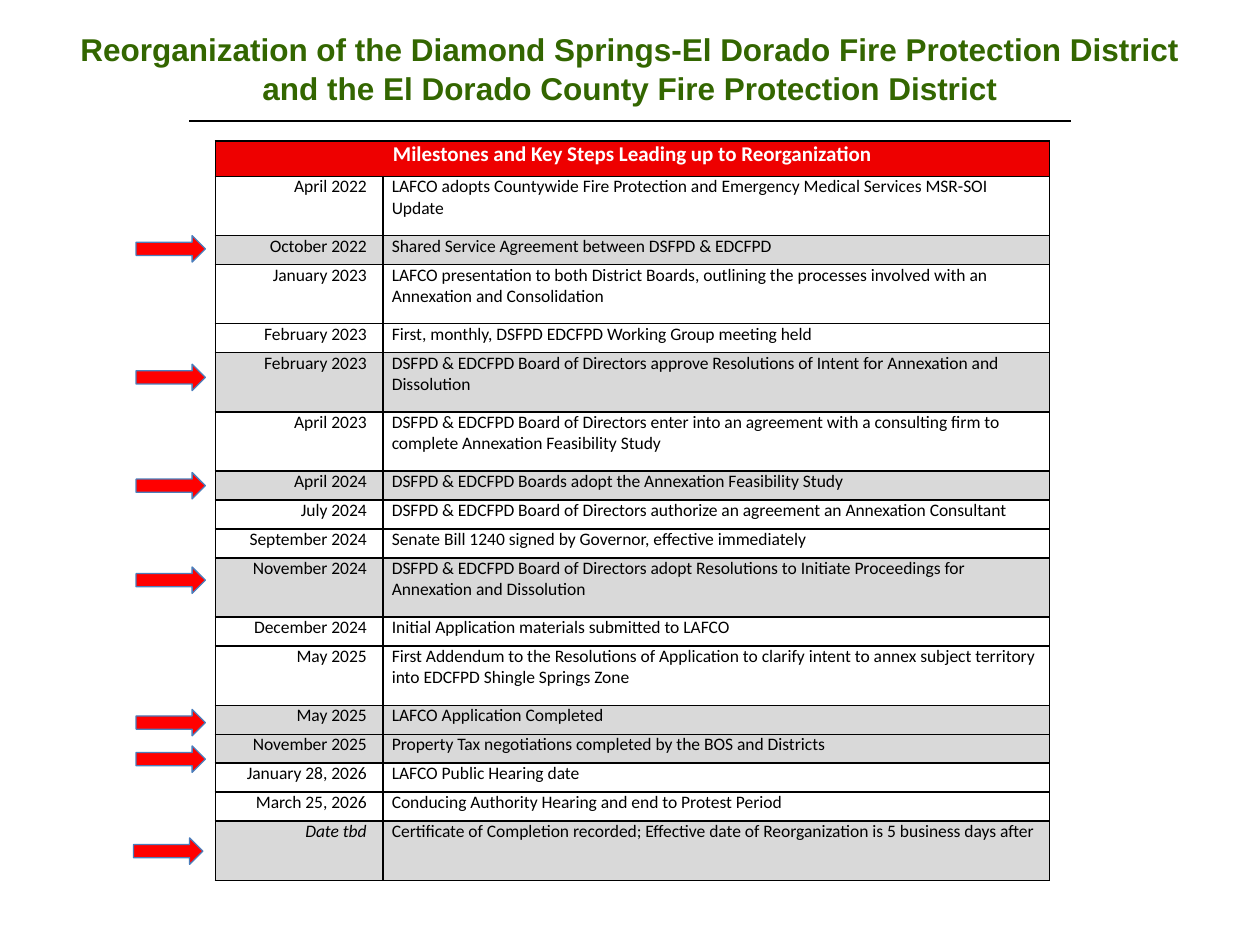
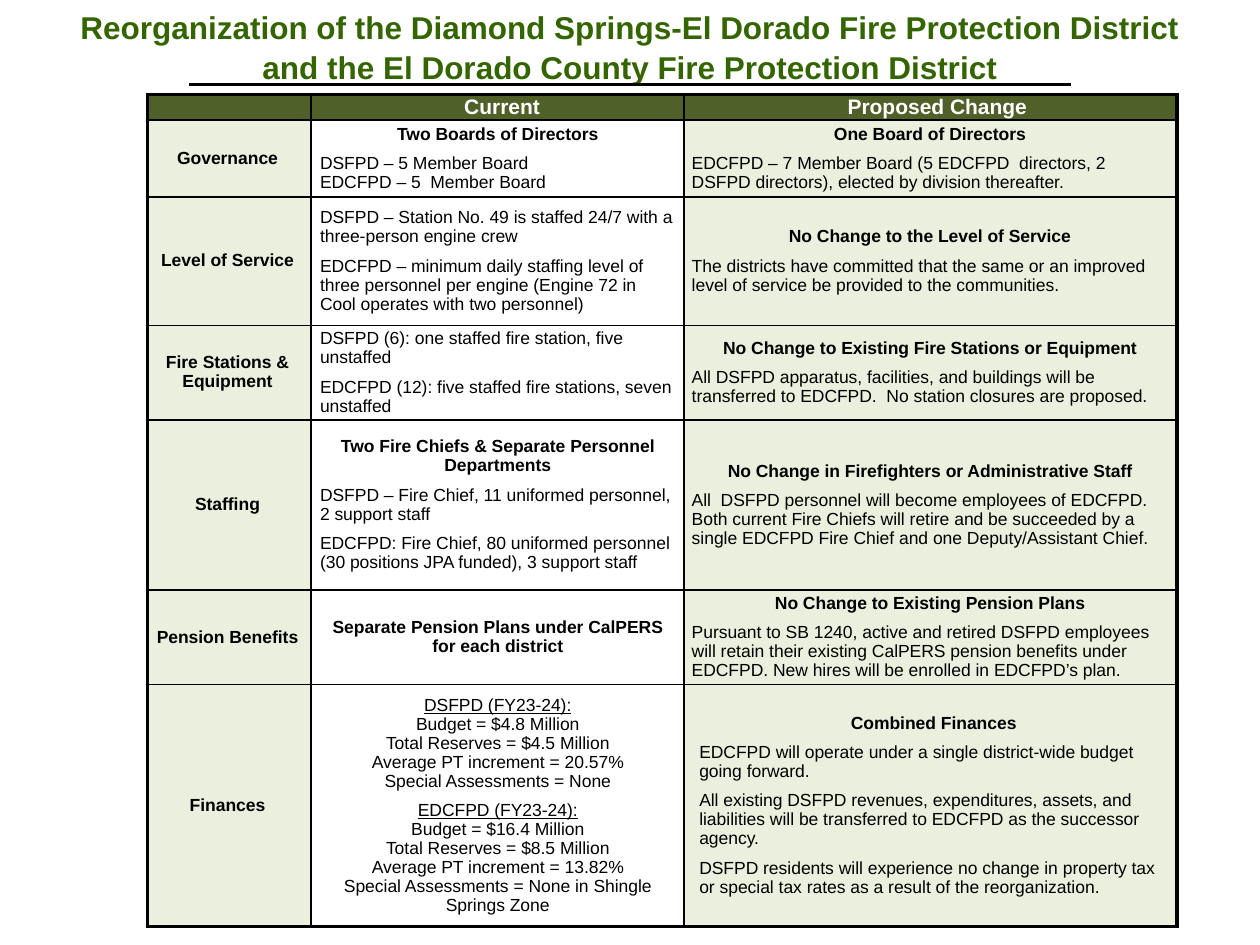
from pptx import Presentation
from pptx.dml.color import RGBColor
from pptx.enum.shapes import MSO_CONNECTOR, MSO_SHAPE
from pptx.enum.text import MSO_ANCHOR, MSO_AUTO_SIZE, PP_ALIGN
from pptx.oxml import parse_xml
from pptx.oxml.ns import nsdecls, qn
from pptx.util import Inches, Pt
from lxml import etree

LEFT, CENTER, RIGHT = PP_ALIGN.LEFT, PP_ALIGN.CENTER, PP_ALIGN.RIGHT
TOP, MIDDLE = MSO_ANCHOR.TOP, MSO_ANCHOR.MIDDLE
NO_AUTOSIZE = MSO_AUTO_SIZE.NONE
ARROW, STRAIGHT = MSO_SHAPE.RIGHT_ARROW, MSO_CONNECTOR.STRAIGHT

COLORS = {
    "title": "336600", "black": "000000", "white": "FFFFFF",
    "banner": "EE0000", "key": "D9D9D9", "arrow": "FF0000", "arrow_line": "4B7EBC",
    "header": "4F6128", "tint": "EAF0DD",
}
TITLE_LINES = [
    "Reorganization of the Diamond Springs-El Dorado Fire Protection District",
    "and the El Dorado County Fire Protection District",
]

MILESTONES = [
    ("April 2022", "LAFCO adopts Countywide Fire Protection and Emergency Medical Services MSR-SOI Update", 2, False),
    ("October 2022", "Shared Service Agreement between DSFPD & EDCFPD", 1, True),
    ("January 2023", "LAFCO presentation to both District Boards, outlining the processes involved with an "
     "Annexation and Consolidation", 2, False),
    ("February 2023", "First, monthly, DSFPD EDCFPD Working Group meeting held", 1, False),
    ("February 2023", "DSFPD & EDCFPD Board of Directors approve Resolutions of Intent for Annexation and "
     "Dissolution", 2, True),
    ("April 2023", "DSFPD & EDCFPD Board of Directors enter into an agreement with a consulting firm to "
     "complete Annexation Feasibility Study", 2, False),
    ("April 2024", "DSFPD & EDCFPD Boards adopt the Annexation Feasibility Study", 1, True),
    ("July 2024", "DSFPD & EDCFPD Board of Directors authorize an agreement an Annexation Consultant", 1, False),
    ("September 2024", "Senate Bill 1240 signed by Governor, effective immediately", 1, False),
    ("November 2024", "DSFPD & EDCFPD Board of Directors adopt Resolutions to Initiate Proceedings for "
     "Annexation and Dissolution", 2, True),
    ("December 2024", "Initial Application materials submitted to LAFCO", 1, False),
    ("May 2025", "First Addendum to the Resolutions of Application to clarify intent to annex subject territory "
     "into EDCFPD Shingle Springs Zone", 2, False),
    ("May 2025", "LAFCO Application Completed", 1, True),
    ("November 2025", "Property Tax negotiations completed by the BOS and Districts", 1, True),
    ("January 28, 2026", "LAFCO Public Hearing date", 1, False),
    ("March 25, 2026", "Conducing Authority Hearing and end to Protest Period", 1, False),
    ("Date tbd", "Certificate of Completion recorded; Effective date of Reorganization is 5 business days after",
     2, True),
]
ROW_HEIGHTS = {1: 0.23, 2: 0.47}
ARROWS = [(1.08, 1.87), (1.08, 2.89), (1.08, 3.75), (1.08, 4.5), (1.08, 5.63), (1.08, 5.92), (1.06, 6.65)]

HEAD = {"bold": True, "align": CENTER, "after": 6}
BODY = {"after": 6}
TIGHT = {}
MID = {"align": CENTER}
MID_END = {"align": CENTER, "after": 6}
UNDER = {"align": CENTER, "underline": True}

COMPARISON = [
    ("Governance", 0.61,
     [("Two Boards of Directors", HEAD), ("DSFPD – 5 Member Board", TIGHT), ("EDCFPD – 5  Member Board", TIGHT)],
     [("One Board of Directors", HEAD),
      ("EDCFPD – 7 Member Board (5 EDCFPD  directors, 2 DSFPD directors), elected by division thereafter.", TIGHT)]),
    ("Level of Service", 1.02,
     [("DSFPD – Station No. 49 is staffed 24/7 with a three-person engine crew", BODY),
      ("EDCFPD – minimum daily staffing level of three personnel per engine (Engine 72 in Cool operates "
       "with two personnel)", TIGHT)],
     [("No Change to the Level of Service", HEAD),
      ("The districts have committed that the same or an improved level of service be provided to the "
       "communities.", TIGHT)]),
    ("Fire Stations & Equipment", 0.75,
     [("DSFPD (6): one staffed fire station, five unstaffed", BODY),
      ("EDCFPD (12): five staffed fire stations, seven unstaffed", TIGHT)],
     [("No Change to Existing Fire Stations or Equipment", HEAD),
      ("All DSFPD apparatus, facilities, and buildings will be transferred to EDCFPD.  No station closures "
       "are proposed.", TIGHT)]),
    ("Staffing", 1.35,
     [("Two Fire Chiefs & Separate Personnel Departments", HEAD),
      ("DSFPD – Fire Chief, 11 uniformed personnel, 2 support staff", BODY),
      ("EDCFPD: Fire Chief, 80 uniformed personnel (30 positions JPA funded), 3 support staff", TIGHT)],
     [("No Change in Firefighters or Administrative Staff", HEAD),
      ("All  DSFPD personnel will become employees of EDCFPD. Both current Fire Chiefs will retire and be "
       "succeeded by a single EDCFPD Fire Chief and one Deputy/Assistant Chief.", TIGHT)]),
    ("Pension Benefits", 0.75,
     [("Separate Pension Plans under CalPERS for each district", HEAD)],
     [("No Change to Existing Pension Plans", HEAD),
      ("Pursuant to SB 1240, active and retired DSFPD employees will retain their existing CalPERS pension "
       "benefits under EDCFPD. New hires will be enrolled in EDCFPD’s plan.", TIGHT)]),
    ("Finances", 1.92,
     [("DSFPD (FY23-24):", UNDER), ("Budget = $4.8 Million", MID), ("Total Reserves = $4.5 Million", MID),
      ("Average PT increment = 20.57%", MID), ("Special Assessments = None", MID_END),
      ("EDCFPD (FY23-24):", UNDER), ("Budget = $16.4 Million", MID), ("Total Reserves = $8.5 Million", MID),
      ("Average PT increment = 13.82%", MID), ("Special Assessments = None in Shingle Springs Zone", MID)],
     [("Combined Finances", HEAD),
      ("EDCFPD will operate under a single district-wide budget going forward.", BODY),
      ("All existing DSFPD revenues, expenditures, assets, and liabilities will be transferred to EDCFPD as "
       "the successor agency.", BODY),
      ("DSFPD residents will experience no change in property tax or special tax rates as a result of the "
       "reorganization.", TIGHT)]),
]


def rgb(name):
    return RGBColor.from_string(COLORS[name])


def write(p, text, size=10, font="Arial", color="black", bold=False, italic=False, underline=False,
          align=LEFT, after=0, spacing=None):
    p.alignment = align
    p.space_before, p.space_after = Pt(0), Pt(after)
    if spacing:
        p.line_spacing = spacing
    if not text:
        p._p.get_or_add_endParaRPr().set("sz", str(size * 100))
        return
    r = p.add_run()
    r.text = text
    f = r.font
    f.size, f.name, f.bold, f.italic, f.underline = Pt(size), font, bold, italic, underline
    f.color.rgb = rgb(color)


class Deck:
    def __init__(self):
        self.prs = Presentation()
        self.prs.slide_width, self.prs.slide_height = Inches(10), Inches(7.5)
        self.s = None

    def slide(self, title_top, rule_top):
        self.s = self.prs.slides.add_slide(self.prs.slide_layouts[5])
        sp = self.s.shapes.title
        sp.left, sp.top, sp.width, sp.height = Inches(0), Inches(title_top), Inches(10), Inches(0.71)
        tf = sp.text_frame
        tf.auto_size, tf.vertical_anchor, tf.word_wrap = NO_AUTOSIZE, TOP, True
        self.fill_text(tf, [(line, {"align": CENTER}) for line in TITLE_LINES],
                       size=18, color="title", bold=True, spacing=1.05)
        self.rule(1.5, 8.5, rule_top)

    def fill_text(self, tf, paragraphs, **base):
        for i, (text, fmt) in enumerate(paragraphs):
            p = tf.add_paragraph() if i else tf.paragraphs[0]
            write(p, text, **{**base, **fmt})

    def rule(self, x1, x2, y):
        line = self.s.shapes.add_connector(STRAIGHT, Inches(x1), Inches(y), Inches(x2), Inches(y))
        line.line.color.rgb, line.line.width = rgb("black"), Pt(1.5)
        etree.SubElement(line._element.spPr, qn("a:effectLst"))

    def arrow(self, x, y):
        sp = self.s.shapes.add_shape(ARROW, Inches(x), Inches(y), Inches(0.55), Inches(0.21))
        sp.shadow.inherit = False
        sp.fill.solid()
        sp.fill.fore_color.rgb = rgb("arrow")
        sp.line.color.rgb, sp.line.width = rgb("arrow_line"), Pt(0.75)

    def table(self, x, y, cols, rows):
        frame = self.s.shapes.add_table(len(rows), len(cols), Inches(x), Inches(y),
                                        Inches(sum(cols)), Inches(sum(rows)))
        table = frame.table
        table.first_row = table.horz_banding = False
        for column, width in zip(table.columns, cols):
            column.width = Inches(width)
        for row, height in zip(table.rows, rows):
            row.height = Inches(height)
        return table

    def cell(self, table, row, col, paragraphs, fill=None, margins=(0.07, 0.07), anchor=TOP, outer=1, **base):
        cell = table.cell(row, col)
        cell.margin_left, cell.margin_right = (Inches(m) for m in margins)
        cell.margin_top = cell.margin_bottom = 0
        cell.vertical_anchor = anchor
        edges = {"L": col == 0, "R": col == len(table.columns) - 1,
                 "T": row == 0, "B": row == len(table.rows) - 1}
        for side, on_edge in edges.items():
            width = Pt(outer if on_edge else 1)
            cell._tc.get_or_add_tcPr().append(parse_xml(
                f'<a:ln{side} {nsdecls("a")} w="{width}"><a:solidFill>'
                f'<a:srgbClr val="{COLORS["black"]}"/></a:solidFill></a:ln{side}>'))
        if fill:
            cell.fill.solid()
            cell.fill.fore_color.rgb = rgb(fill)
        else:
            cell.fill.background()
        self.fill_text(cell.text_frame, paragraphs, **base)


def milestones_slide(deck):
    deck.slide(0.17, 0.96)
    table = deck.table(1.71, 1.12, [1.33, 5.29], [0.28] + [ROW_HEIGHTS[m[2]] for m in MILESTONES])
    for col, text in enumerate(["Milestones and Key Steps Leading up to Reorganization", ""]):
        deck.cell(table, 0, col, [(text, HEAD)], "banner", font="Calibri", size=12, color="white")
    table.cell(0, 0).merge(table.cell(0, 1))
    for row, (date, step, _, is_key) in enumerate(MILESTONES, 1):
        fill = "key" if is_key else "white"
        date_format = {"align": RIGHT, "italic": date == "Date tbd"}
        deck.cell(table, row, 0, [(date, date_format)], fill, (0.07, 0.13), font="Calibri")
        deck.cell(table, row, 1, [(step, TIGHT)], fill, (0.07, 0.08), font="Calibri")
    for x, y in ARROWS:
        deck.arrow(x, y)


def comparison_slide(deck):
    deck.slide(0, 0.67)
    table = deck.table(1.17, 0.75, [1.3, 2.96, 3.91], [0.19] + [c[1] for c in COMPARISON])
    style = {"anchor": MIDDLE, "outer": 2.25, "spacing": 0.97}
    for col, (text, left) in enumerate([("", 0), ("Current", 0.07), ("Proposed Change", 0.11)]):
        deck.cell(table, 0, col, [(text, {"bold": True, "align": CENTER})], "header", (left, 0),
                  size=12, color="white", **style)
    for row, (topic, _, current, proposed) in enumerate(COMPARISON, 1):
        left = 0.12 if topic == "Finances" else 0.06
        deck.cell(table, row, 0, [(topic, {"bold": True, "align": CENTER})], "tint", (0.04, 0.07), **style)
        deck.cell(table, row, 1, current, **style)
        deck.cell(table, row, 2, proposed, "tint", (left, 0.07), **style)


def main():
    deck = Deck()
    milestones_slide(deck)
    comparison_slide(deck)
    deck.prs.save("out.pptx")


if __name__ == "__main__":
    main()
